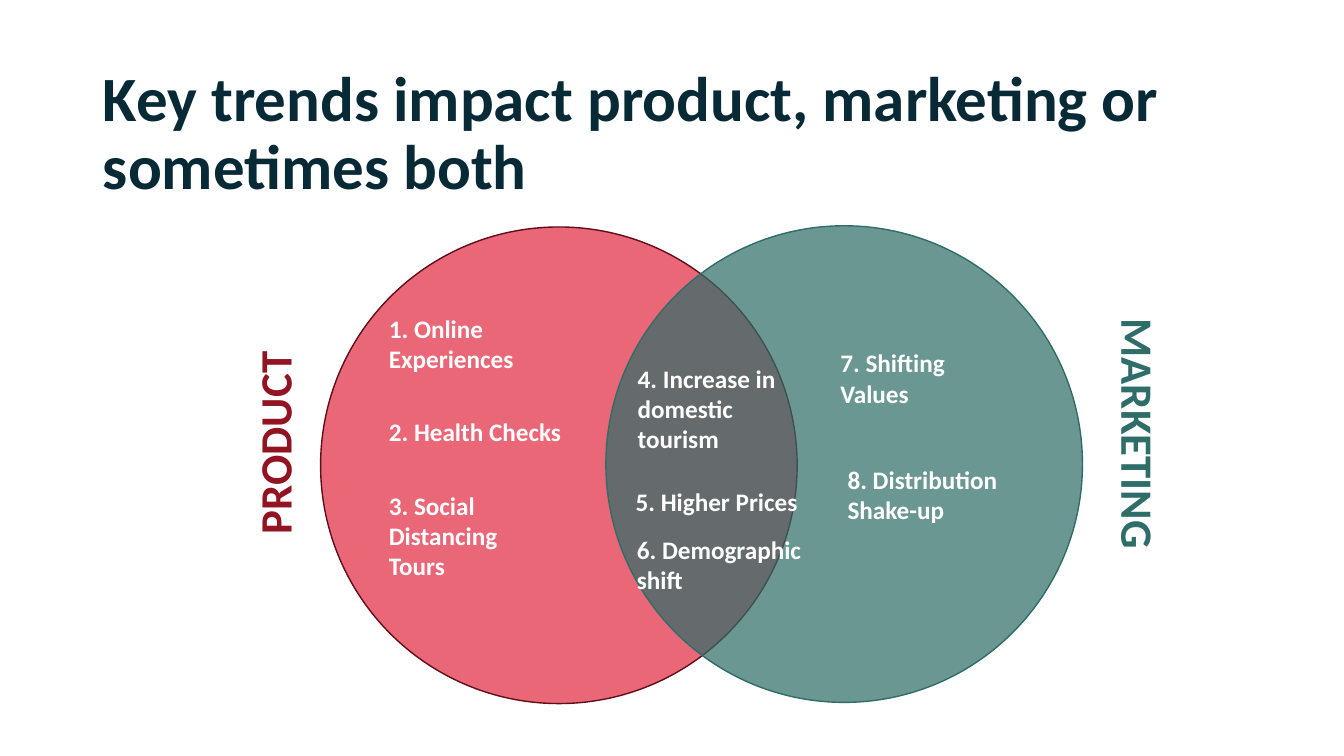
from lxml.etree import SubElement
from pptx import Presentation
from pptx.dml.color import RGBColor
from pptx.enum.shapes import MSO_SHAPE as Shape
from pptx.enum.text import MSO_ANCHOR as Anchor, MSO_AUTO_SIZE as AutoSize, PP_ALIGN as Align
from pptx.oxml.ns import qn
from pptx.util import Cm, Pt

INK, RED, DARK_RED, TEAL, ROSE, WHITE = "082A36", "921423", "620D18", "2F6D68", "EA6777", "FFFFFF"
DIAMETER = 12.01
TREND_WIDTH = 4.72

TRENDS = [
    ("1. Online Experiences", 9.55, 7.77, 5.66, 2),
    ("2. Health Checks", 9.55, 10.36, 5.23, 1),
    ("3. Social Distancing Tours", 9.55, 12.22, TREND_WIDTH, 3),
    ("4. Increase in domestic tourism", 15.82, 9.02, TREND_WIDTH, 3),
    ("5. Higher Prices", 15.77, 12.14, TREND_WIDTH, 1),
    ("6. Demographic shift", 15.8, 13.34, TREND_WIDTH, 2),
    ("7. Shifting Values", 20.93, 8.64, TREND_WIDTH, 2),
    ("8. Distribution Shake-up", 21.11, 11.58, TREND_WIDTH, 2),
]


def colour(hex_value):
    return RGBColor.from_string(hex_value)


class VennSlide:
    """Holds the text style and the current slide, and adds its elements."""

    def __init__(self, deck, font="Calibri"):
        self.slide = deck.slides.add_slide(deck.slide_layouts[5])
        self.style = {"name": font, "bold": True}

    def set_text(self, frame, text, size, hex_value, **frame_format):
        for key, value in {"word_wrap": True, **frame_format}.items():
            setattr(frame, key, value)
        frame.text = text
        line = frame.paragraphs[0]
        line.alignment = Align.LEFT
        for key, value in {**self.style, "size": Pt(size)}.items():
            setattr(line.font, key, value)
        line.font.color.rgb = colour(hex_value)
        return line

    def title(self, text, left, top, width, height):
        heading = self.slide.shapes.title
        box = {"left": left, "top": top, "width": width, "height": height}
        for key, value in box.items():
            setattr(heading, key, Cm(value))
        line = self.set_text(heading.text_frame, text, 45, INK,
                             vertical_anchor=Anchor.MIDDLE, auto_size=AutoSize.NONE)
        line.line_spacing = 0.9

    def circles(self, circles):
        venn = self.slide.shapes.add_group_shape()
        for left, top, fill, outline, opacity in circles:
            circle = venn.shapes.add_shape(
                Shape.OVAL, Cm(left), Cm(top), Cm(DIAMETER), Cm(DIAMETER))
            circle.shadow.inherit = False
            circle.fill.solid()
            circle.fill.fore_color.rgb = colour(fill)
            circle.line.color.rgb = colour(outline)
            circle.line.width = Pt(1)
            if opacity < 100:
                tint = circle.element.spPr.find(qn("a:solidFill"))[0]
                SubElement(tint, qn("a:alpha"), val=str(opacity * 1000))

    def label(self, text, left, top, width, height, size, hex_value, rotation=0):
        box = self.slide.shapes.add_textbox(Cm(left), Cm(top), Cm(width), Cm(height))
        box.rotation = rotation
        self.set_text(box.text_frame, text, size, hex_value,
                      auto_size=AutoSize.SHAPE_TO_FIT_TEXT)

    def trend(self, text, left, top, width, lines):
        self.label(text, left, top, width, 0.25 + 0.77 * lines, 18, WHITE)


def main():
    deck = Presentation()
    deck.slide_width, deck.slide_height = Cm(33.87), Cm(19.05)
    venn = VennSlide(deck)
    venn.title("Key trends impact product, marketing or sometimes both",
               2.34, 1.57, 29.21, 3.68)
    venn.circles([(8.08, 5.72, ROSE, DARK_RED, 100), (15.27, 5.69, TEAL, TEAL, 71)])
    for trend in TRENDS:
        venn.trend(*trend)
    venn.label("PRODUCT", 3.94, 9.93, 5.94, 1.63, 32, RED, rotation=270)
    venn.label("MARKETING", 25.22, 10.44, 6.96, 1.63, 32, TEAL, rotation=90)
    deck.save("out.pptx")


if __name__ == "__main__":
    main()
